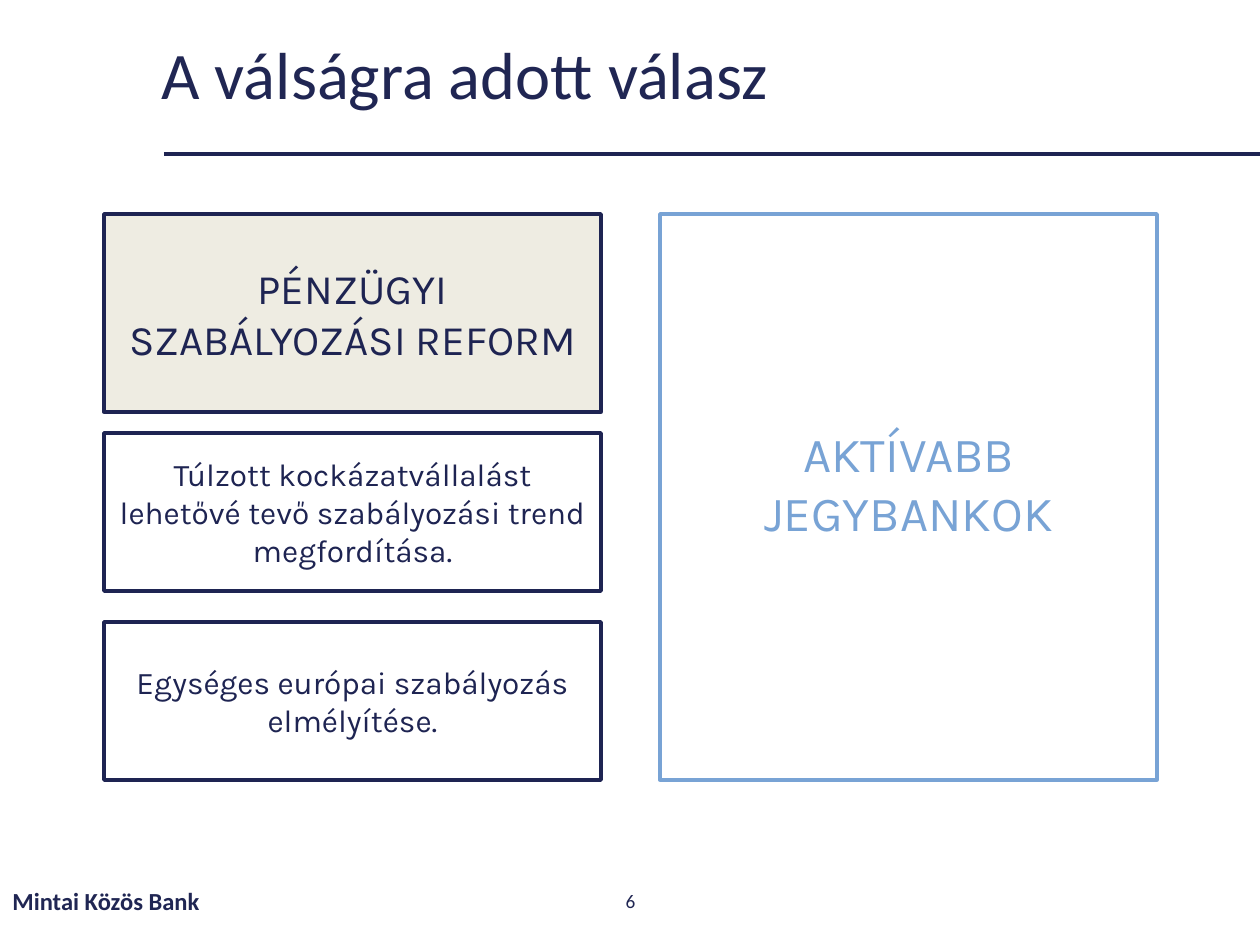
"""Build the slide on the answer given to the crisis."""
from lxml import etree
from pptx import Presentation, util as u
from pptx.dml.color import RGBColor
from pptx.enum import shapes, text

PX = 914400 / 126
HUES = {"navy": "1E2452", "ink": "202653", "blue": "78A3D5", "sand": "EEECE2"}
LEFT, RIGHT, TOP, END, WIDE = 104, 660, 214, 780, 497
HEAD, ROW, GAP = 198, 158, 31

LABELS = [
    ("A válságra adott válasz", (149, 25, 1032, 105), "LEFT", 0.9,
     {"size": u.Pt(38)}),
    ("Mintai Közös Bank", (0, 876, 426, 50), "LEFT", 1.0,
     {"size": u.Pt(14), "bold": True}),
    ("6", (489, 876, 283, 50), "CENTER", 1.0, {"size": u.Pt(11)}),
]
LOW = END - ROW
MID = LOW - GAP - ROW
BOXES = [
    ("PÉNZÜGYI SZABÁLYOZÁSI REFORM", (LEFT, TOP, WIDE, HEAD),
     "navy", "sand", 24, 6),
    ("AKTÍVABB JEGYBANKOK", (RIGHT, TOP, WIDE, END - TOP),
     "blue", None, 28, 36),
    ("Túlzott kockázatvállalást lehetővé tevő szabályozási trend megfordítása.",
     (LEFT, MID, WIDE, ROW), "navy", None, 18, 6),
    ("Egységes európai szabályozás elmélyítése.",
     (LEFT, LOW, WIDE, ROW), "navy", None, 18, 6),
]


def emu(*nums):
    return [u.Emu(round(n * PX)) for n in nums]


def hue(name):
    return RGBColor.from_string(HUES[name])


def write(shape, words, align, color, form):
    frame = shape.text_frame
    frame.word_wrap = True
    frame.vertical_anchor = text.MSO_ANCHOR.MIDDLE
    para = frame.paragraphs[0]
    para.alignment = getattr(text.PP_ALIGN, align)
    run = para.add_run()
    run.text = words
    for key, val in form.items():
        setattr(run.font, key, val)
    run.font.color.rgb = hue(color)
    return para


def main():
    deck = Presentation()
    deck.slide_width, deck.slide_height = emu(1260, 945)
    slide = deck.slides.add_slide(deck.slide_layouts[6])

    rule = slide.shapes.add_connector(
        shapes.MSO_CONNECTOR.STRAIGHT, *emu(164, 154, 1260, 154))
    rule.line.color.rgb = hue("navy")
    rule.line.width = u.Pt(2.25)
    space = "http://schemas.openxmlformats.org/drawingml/2006/main"
    etree.SubElement(rule.element.spPr, f"{{{space}}}effectLst")

    for words, place, align, pitch, form in LABELS:
        label = slide.shapes.add_textbox(*emu(*place))
        para = write(label, words, align, "ink", {"name": "Calibri", **form})
        para.line_spacing = pitch

    for words, place, edge, fill, size, inset in BOXES:
        box = slide.shapes.add_shape(
            shapes.MSO_SHAPE.RECTANGLE, *emu(*place))
        box.shadow.inherit = False
        if fill:
            box.fill.solid()
            box.fill.fore_color.rgb = hue(fill)
        else:
            box.fill.background()
        box.line.color.rgb = hue(edge)
        box.line.width = u.Pt(2)
        box.text_frame.margin_bottom = emu(inset)[0]
        write(box, words, "CENTER", edge,
              {"name": "Karla", "size": u.Pt(size)})

    deck.save("out.pptx")


if __name__ == "__main__":
    main()
